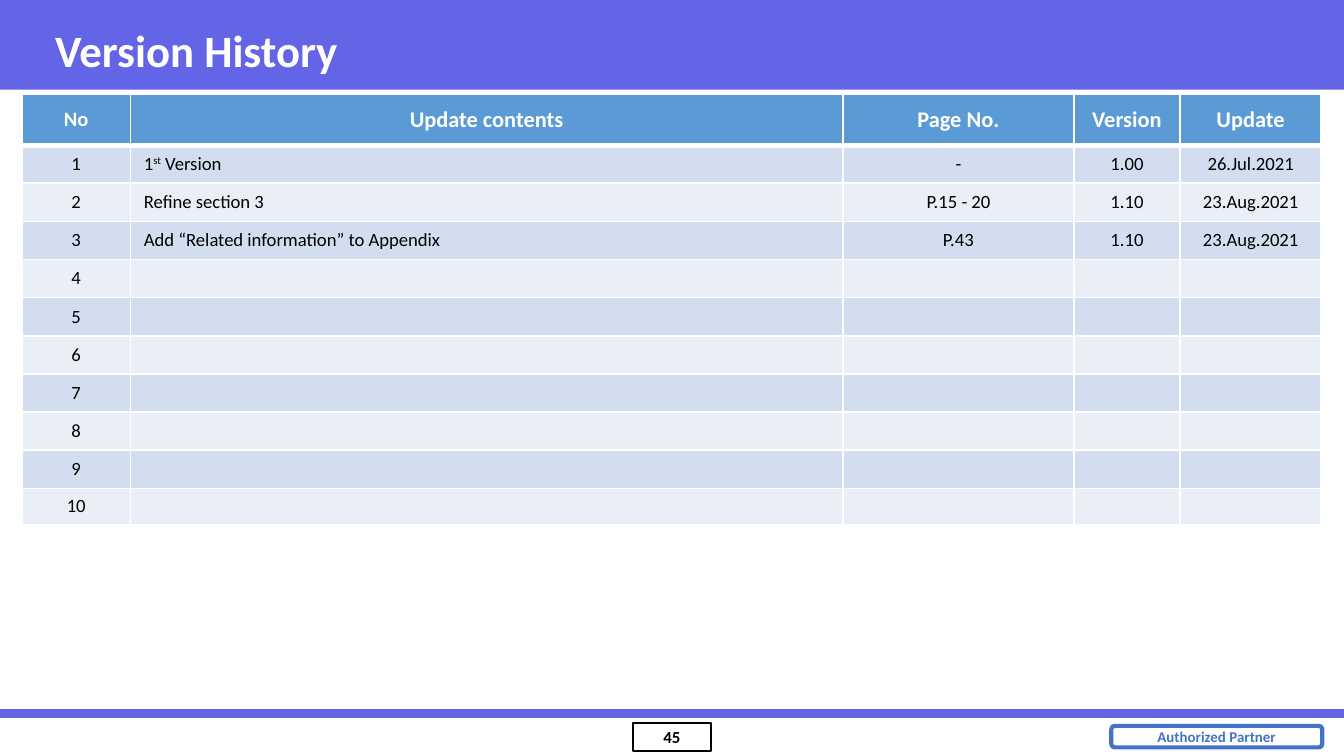
from pptx import Presentation
from pptx.dml.color import RGBColor
from pptx.enum.shapes import MSO_CONNECTOR, MSO_SHAPE
from pptx.enum.text import MSO_ANCHOR, PP_ALIGN
from pptx.oxml import parse_xml
from pptx.oxml.ns import nsdecls, qn
from pptx.util import Pt

RECTANGLE = MSO_SHAPE.RECTANGLE
ROUNDED_RECTANGLE = MSO_SHAPE.ROUNDED_RECTANGLE
STRAIGHT = MSO_CONNECTOR.STRAIGHT
MIDDLE = MSO_ANCHOR.MIDDLE
LEFT, CENTER = PP_ALIGN.LEFT, PP_ALIGN.CENTER

FONT = "Calibri"
VIOLET = RGBColor(0x64, 0x64, 0xE6)
BLUE = RGBColor(0x44, 0x72, 0xC4)
HEADER_BLUE = RGBColor(0x5B, 0x9B, 0xD5)
BAND_DARK = RGBColor(0xD2, 0xDE, 0xEF)
BAND_LIGHT = RGBColor(0xEA, 0xEF, 0xF7)
BLACK = RGBColor(0, 0, 0)
WHITE = RGBColor(0xFF, 0xFF, 0xFF)

SLIDE_WIDTH, SLIDE_HEIGHT = 720, 405
COLUMN_WIDTHS = [58.2, 381.6, 123.8, 56.9, 75.6]
HEADER_HEIGHT, ROW_HEIGHT, LAST_ROW_HEIGHT = 27, 20.45, 19.2
HEADERS = ["No", "Update contents", "Page No.", "Version", "Update"]
UPDATES = [
    [("1", "st", " Version"), "-", "1.00", "26.Jul.2021"],
    [("Refine section 3",), "P.15 - 20", "1.10", "23.Aug.2021"],
    [("Add “Related information” to Appendix",), "P.43", "1.10", "23.Aug.2021"],
]
ROW_COUNT = 10


def points(*lengths):
    """Convert plain numbers to point lengths."""
    return [Pt(length) for length in lengths]


def format_font(font, size, color, bold):
    """Apply the deck font with a size, colour and weight."""
    font.name, font.size, font.bold = FONT, Pt(size), bold
    font.color.rgb = color


def add_label(slide, kind, box, text, size, color, line_width):
    """Draw an outlined shape with a bold centred label."""
    shape = slide.shapes.add_shape(kind, *points(*box))
    shape.shadow.inherit = False
    shape.fill.background()
    shape.line.color.rgb = color
    shape.line.width = Pt(line_width)
    frame = shape.text_frame
    frame.margin_left = frame.margin_right = Pt(2)
    frame.margin_top = frame.margin_bottom = Pt(2)
    frame.vertical_anchor = MIDDLE
    frame.text = text
    frame.paragraphs[0].alignment = CENTER
    format_font(frame.paragraphs[0].runs[0].font, size, color, True)
    return shape


def add_title_band(slide, box, text):
    """Fill the title band and set the title over it."""
    left, top, width, height = box
    band = slide.shapes.add_shape(RECTANGLE, *points(*box))
    band.shadow.inherit = False
    band.fill.solid()
    band.fill.fore_color.rgb = VIOLET
    band.line.fill.background()
    title = slide.shapes.title
    title.left, title.top, title.width, title.height = points(
        left + 22.3, top + 5.8, width - 53.3, height - 6.4)
    band.element.addnext(title.element)
    frame = title.text_frame
    frame.text = text
    frame.vertical_anchor = MIDDLE
    frame.paragraphs[0].alignment = LEFT
    format_font(frame.paragraphs[0].runs[0].font, 24, WHITE, True)


def add_footer(slide, box, number, badge):
    """Draw the footer rule, the page number and the partner badge."""
    left, top, width, height = box
    rule = slide.shapes.add_connector(STRAIGHT, *points(left, top, left + width, top))
    rule.line.color.rgb = VIOLET
    rule.line.width = Pt(4.5)
    rule.element.spPr.append(parse_xml(f"<a:effectLst {nsdecls('a')}/>"))
    number_width = 42
    number_left = left + (width - number_width) / 2
    add_label(slide, RECTANGLE, (number_left, top + 5, number_width, 15),
              number, 9, BLACK, 1)
    badge_box = (left + width - 124.6, top + 6.6, 113, 11.5)
    shape = add_label(slide, ROUNDED_RECTANGLE, badge_box, badge, 8, BLUE, 2.25)
    shape.text_frame.word_wrap = False


def set_borders(cell, bottom_width):
    """Give a cell white borders with its own bottom width."""
    properties = cell._tc.get_or_add_tcPr()
    for index, side in enumerate("LRTB"):
        width = Pt(bottom_width if side == "B" else 1)
        properties.insert(index, parse_xml(
            f'<a:ln{side} {nsdecls("a")} w="{width}"><a:solidFill>'
            f'<a:srgbClr val="{WHITE}"/></a:solidFill></a:ln{side}>'))


def fill_cell(cell, pieces, fill, size, color, bold, alignment):
    """Write a cell whose second piece, if any, is a superscript."""
    cell.fill.solid()
    cell.fill.fore_color.rgb = fill
    cell.vertical_anchor = MIDDLE
    paragraph = cell.text_frame.paragraphs[0]
    paragraph.alignment = alignment
    for index, piece in enumerate(pieces):
        run = paragraph.add_run()
        run.text = piece
        format_font(run.font, size, color, bold)
        if index == 1:
            run._r.get_or_add_rPr().set("baseline", "30000")
    if not pieces:
        end = paragraph._p.makeelement(qn("a:endParaRPr"), {"sz": str(size * 100)})
        paragraph._p.append(end)


def add_history_table(slide, left, top):
    """Build the numbered table of updates."""
    heights = [HEADER_HEIGHT] + [ROW_HEIGHT] * (ROW_COUNT - 1) + [LAST_ROW_HEIGHT]
    box = points(left, top, sum(COLUMN_WIDTHS), sum(heights))
    table = slide.shapes.add_table(len(heights), len(COLUMN_WIDTHS), *box).table
    for column, width in zip(table.columns, COLUMN_WIDTHS):
        column.width = Pt(width)
    for row, height in zip(table.rows, heights):
        row.height = Pt(height)
    for index, header in enumerate(HEADERS):
        cell = table.cell(0, index)
        size = 11 if index == 0 else 12
        fill_cell(cell, [header], HEADER_BLUE, size, WHITE, True, CENTER)
        set_borders(cell, 3)
    for number in range(1, ROW_COUNT + 1):
        update = UPDATES[number - 1] if number <= len(UPDATES) else [()] * 4
        fill = BAND_DARK if number % 2 else BAND_LIGHT
        for index, content in enumerate([str(number), *update]):
            cell = table.cell(number, index)
            pieces = [content] if isinstance(content, str) else content
            alignment = LEFT if index == 1 else CENTER
            fill_cell(cell, pieces, fill, 10, BLACK, False, alignment)
            set_borders(cell, 1)


def main():
    """Build and save the version history slide."""
    presentation = Presentation()
    presentation.slide_width, presentation.slide_height = points(SLIDE_WIDTH, SLIDE_HEIGHT)
    slide = presentation.slides.add_slide(presentation.slide_layouts[5])
    add_title_band(slide, (0, 0, SLIDE_WIDTH, 48), "Version History")
    add_footer(slide, (0, 382.3, SLIDE_WIDTH, 22.7), "45", "Authorized Partner")
    add_history_table(slide, 11.7, 50.7)
    presentation.save("out.pptx")


if __name__ == "__main__":
    main()
